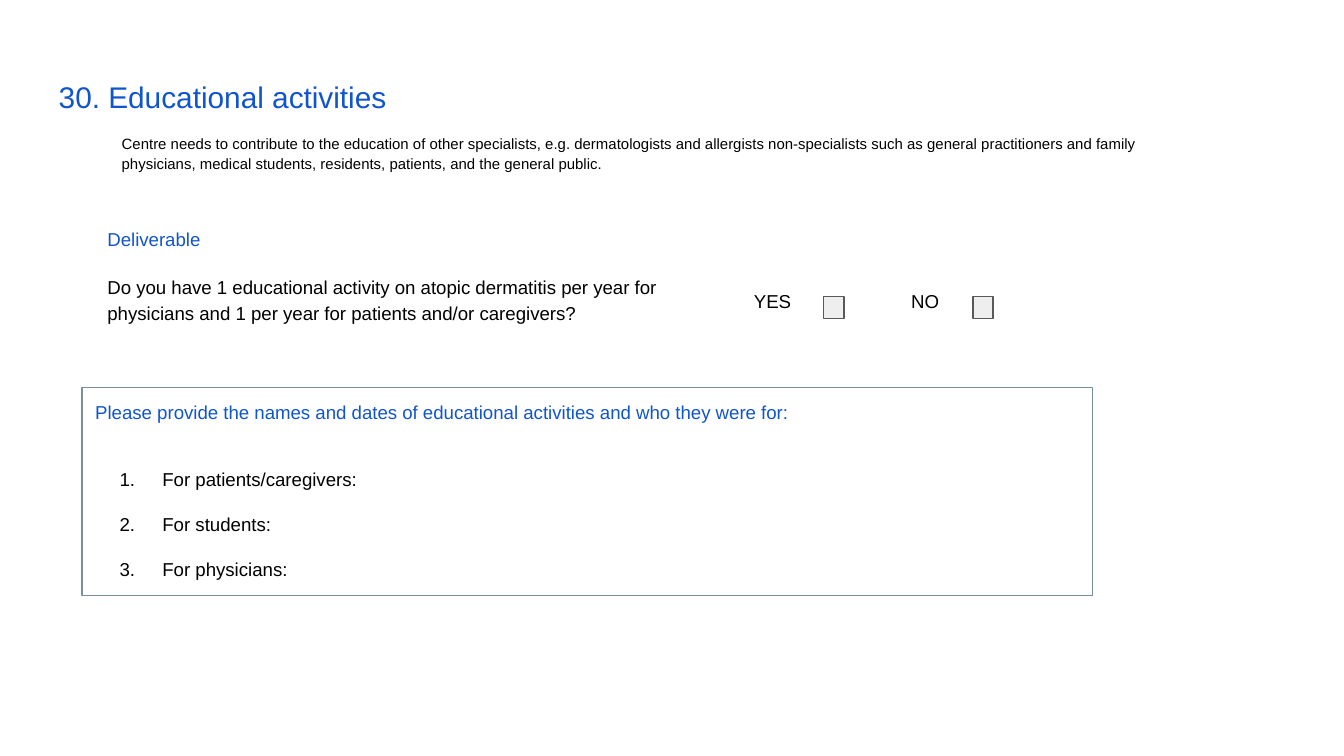
import pptx
import pptx.dml.color
import pptx.enum.shapes
import pptx.enum.text
import pptx.oxml
import pptx.oxml.ns
import pptx.util
from pptx.util import Cm

COLOURS = {"heading": "1155CC", "body": "000000", "frame": "78909C",
           "check_fill": "EEEEEE", "check_line": "595959"}


class FormSlide:
    font = "Arial"
    inset = Cm(0.25)

    def __init__(self, presentation):
        self.slide = presentation.slides.add_slide(presentation.slide_layouts[5])

    def colour(self, key):
        return pptx.dml.color.RGBColor.from_string(COLOURS[key])

    def prepare(self, frame):
        frame.word_wrap = True
        frame.auto_size = pptx.enum.text.MSO_AUTO_SIZE.NONE
        frame.vertical_anchor = pptx.enum.text.MSO_ANCHOR.TOP
        frame.margin_left = frame.margin_right = self.inset
        frame.margin_top = frame.margin_bottom = self.inset
        return frame

    def add_text(self, paragraph, text, size=10, colour="body", spacing=1.0,
                 before=0, after=0):
        paragraph.alignment = pptx.enum.text.PP_ALIGN.LEFT
        paragraph.line_spacing = spacing
        paragraph.space_before = pptx.util.Pt(before)
        paragraph.space_after = pptx.util.Pt(after)
        run = paragraph.add_run()
        run.text = text
        run.font.name = self.font
        run.font.size = pptx.util.Pt(size)
        run.font.color.rgb = self.colour(colour)

    def title(self, text, left, top, width, height):
        title = self.slide.shapes.title
        title.left, title.top, title.width, title.height = left, top, width, height
        frame = self.prepare(title.text_frame)
        self.add_text(frame.paragraphs[0], text, 16, "heading")

    def text_box(self, left, top, width, height):
        box = self.slide.shapes.add_textbox(left, top, width, height)
        return self.prepare(box.text_frame)

    def rectangle(self, left, top, width, height, line, fill=None):
        rectangle = self.slide.shapes.add_shape(
            pptx.enum.shapes.MSO_SHAPE.RECTANGLE, left, top, width, height)
        rectangle.shadow.inherit = False
        rectangle.line.color.rgb = self.colour(line)
        rectangle.line.width = pptx.util.Pt(0.75)
        if fill:
            rectangle.fill.solid()
            rectangle.fill.fore_color.rgb = self.colour(fill)
        else:
            rectangle.fill.background()
        return self.prepare(rectangle.text_frame)

    def indent(self, paragraph, left, first=0):
        properties = paragraph._p.get_or_add_pPr()
        properties.set("marL", str(int(left)))
        properties.set("indent", str(int(first)))
        return properties

    def numbered(self, paragraph, text, before=0):
        self.add_text(paragraph, text, spacing=2.0, before=before)
        properties = self.indent(paragraph, Cm(1.27), Cm(-0.81))
        namespace = pptx.oxml.ns.nsdecls("a")
        for xml in (f'<a:buClr {namespace}><a:srgbClr val="{COLOURS["body"]}"/></a:buClr>',
                    f'<a:buFont {namespace} typeface="{self.font}"/>',
                    f'<a:buAutoNum {namespace} type="arabicPeriod"/>'):
            properties.append(pptx.oxml.parse_xml(xml))


def main():
    presentation = pptx.Presentation()
    presentation.slide_width, presentation.slide_height = Cm(25.4), Cm(14.29)
    form = FormSlide(presentation)

    # Title and requirement
    form.title("30. Educational activities", Cm(0.86), Cm(1.24), Cm(23.67), Cm(1.6))
    requirement = form.text_box(Cm(1.75), Cm(2.24), Cm(20.42), Cm(2.21)).paragraphs[0]
    form.add_text(requirement, "Centre needs to contribute to the education of other "
                  "specialists, e.g. dermatologists and allergists non-specialists such as "
                  "general practitioners and family physicians, medical students, residents, "
                  "patients, and the general public.", 8, spacing=1.15)
    form.indent(requirement, Cm(0.3))

    # Framed answer area
    answers = form.rectangle(Cm(1.55), Cm(7.32), Cm(19.1), Cm(3.94), "frame")
    form.add_text(answers.paragraphs[0], "Please provide the names and dates of educational "
                  "activities and who they were for:", colour="heading")
    audiences = ("patients/caregivers", "students", "physicians")
    for index, audience in enumerate(audiences):
        form.numbered(answers.add_paragraph(), f"For {audience}:",
                      before=12 if index == 0 else 0)

    # Deliverable question
    deliverable = form.text_box(Cm(1.78), Cm(3.99), Cm(11.63), Cm(3.05))
    form.add_text(deliverable.paragraphs[0], "Deliverable", colour="heading",
                  spacing=1.15, before=6)
    form.add_text(deliverable.add_paragraph(), "Do you have 1 educational activity on atopic "
                  "dermatitis per year for physicians and 1 per year for patients and/or "
                  "caregivers?", spacing=1.15, before=12, after=12)

    # Yes and no check boxes
    for choice, label_left, check_left in (("YES", 14.0, 15.57), ("NO", 16.97, 18.39)):
        label = form.text_box(Cm(label_left), Cm(5.16), Cm(1.27), Cm(0.94))
        form.add_text(label.paragraphs[0], choice, spacing=1.15, before=6, after=12)
        form.rectangle(Cm(check_left), Cm(5.61), Cm(0.38), Cm(0.41),
                       "check_line", "check_fill")

    presentation.save("out.pptx")


if __name__ == "__main__":
    main()
